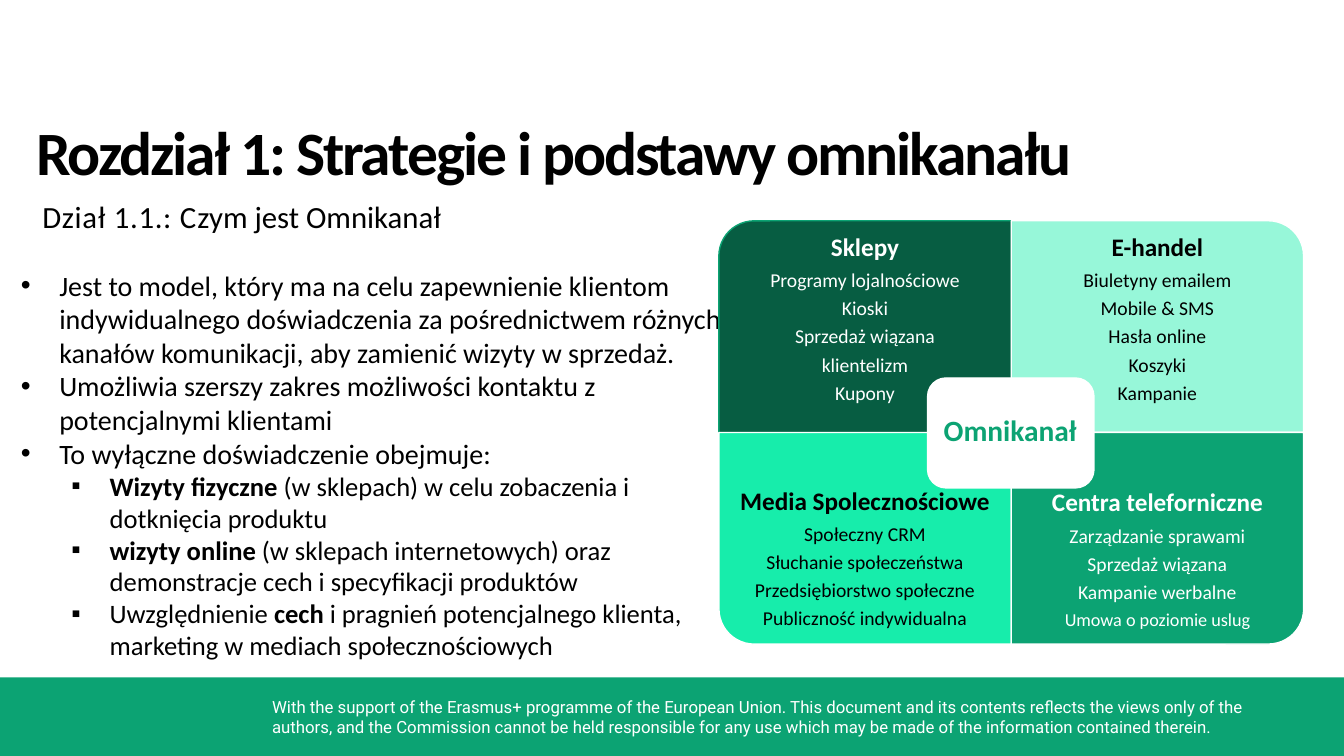
from lxml.etree import SubElement
from pptx import Presentation
from pptx.dml.color import RGBColor
from pptx.enum.shapes import MSO_SHAPE
from pptx.enum.text import MSO_ANCHOR, MSO_AUTO_SIZE, PP_ALIGN
from pptx.oxml.ns import qn
from pptx.util import Inches, Pt

COLORS = {
    "black": "000000", "white": "FFFFFF", "green": "0CA373",
    "dark": "075D42", "pale": "97F7D9", "bright": "17EDAB",
}


class Deck:
    """Holds the style and the current slide."""

    def __init__(self, width, height):
        self.prs = Presentation()
        self.prs.slide_width = Inches(width)
        self.prs.slide_height = Inches(height)
        self.slide = self.prs.slides.add_slide(self.prs.slide_layouts[5])
        self.font = "Calibri"

    def color(self, name):
        return RGBColor.from_string(COLORS[name])

    def run(self, para, text, size, color="black", bold=False, gap=0, font=None):
        run = para.add_run()
        run.text = text
        run.font.name = font or self.font
        run.font.size = Pt(size)
        run.font.bold = bold
        run.font.color.rgb = self.color(color)
        if gap:
            run.font._element.set("spc", str(int(gap * 100)))

    def frame(self, shape, inset, anchor):
        frame = shape.text_frame
        frame.word_wrap = True
        frame.auto_size = MSO_AUTO_SIZE.NONE
        frame.vertical_anchor = anchor
        frame.margin_left = frame.margin_right = Inches(inset[0])
        frame.margin_top = frame.margin_bottom = Inches(inset[1])
        return frame

    def title(self, text, box, size, gap):
        shape = self.slide.shapes.title
        shape.left, shape.top, shape.width, shape.height = map(Inches, box)
        para = self.frame(shape, (0, 0.01), MSO_ANCHOR.TOP).paragraphs[0]
        para.alignment = PP_ALIGN.LEFT
        self.run(para, text, size, bold=True, gap=gap)

    def text(self, box, inset=(0.1, 0.05), anchor=MSO_ANCHOR.TOP):
        shape = self.slide.shapes.add_textbox(*map(Inches, box))
        return self.frame(shape, inset, anchor)

    def shape(self, kind, box, fill, line=None, turn=0):
        shape = self.slide.shapes.add_shape(kind, *map(Inches, box))
        shape.shadow.inherit = False
        shape.rotation = turn
        shape.fill.solid()
        shape.fill.fore_color.rgb = self.color(fill)
        if line:
            shape.line.color.rgb = self.color(line)
            shape.line.width = Pt(1)
        else:
            shape.line.fill.background()

    def next(self, frame, first):
        return frame.paragraphs[0] if first else frame.add_paragraph()

    def bullets(self, box, items):
        frame = self.text(box)
        for i, (level, parts) in enumerate(items):
            para = self.next(frame, i == 0)
            para.level = level
            props = para._p.get_or_add_pPr()
            props.set("marL", str(Inches(0.38 + 0.5 * level)))
            props.set("indent", str(Inches(-0.38)))
            SubElement(props, qn("a:buFont")).set("typeface", "Arial")
            SubElement(props, qn("a:buChar")).set("char", "•▪"[level])
            for part, bold in parts:
                self.run(para, part, 20 - level, bold=bold)

    def lines(self, box, items, color, inset, anchor):
        """Centred lines, each a (text, size, bold) tuple."""
        frame = self.text(box, (inset, inset), anchor)
        for i, (text, size, bold) in enumerate(items):
            para = self.next(frame, i == 0)
            para.alignment = PP_ALIGN.CENTER
            para.line_spacing = 0.9
            para.space_after = Pt(0.35 * size)
            self.run(para, text, size, color, bold)

    def card(self, cell, turn, fill, line, color, head, items):
        left, top, width, height = cell
        # A quarter turn swaps the sides around the same centre
        if turn % 180:
            shift = (width - height) / 2
            cell = (left + shift, top - shift, height, width)
        self.shape(MSO_SHAPE.ROUND_1_RECTANGLE, cell, fill, line, turn)
        low = turn in (90, 180)
        area = (left, top + (0.52 if low else 0), width, 1.58)
        anchor = MSO_ANCHOR.BOTTOM if low else MSO_ANCHOR.TOP
        rows = [(head, 18, True)] + [(text, size, False) for text, size in items]
        self.lines(area, rows, color, 0.14, anchor)


def main():
    deck = Deck(13.33, 7.5)

    # Footer band
    deck.shape(MSO_SHAPE.RECTANGLE, (0, 6.72, 13.33, 0.78), "green")
    note = deck.text((2.6, 6.86, 10.42, 0.5))
    deck.run(note.paragraphs[0],
             "With the support of the Erasmus+ programme of the European Union. "
             "This document and its contents reflects the views only of the "
             "authors, and the Commission cannot be held responsible for any use "
             "which may be made of the information contained therein.",
             12, "white", font="Roboto")

    # Title and section
    deck.title("Rozdział 1: Strategie i podstawy omnikanału",
               (0.36, 1.12, 10.4, 0.75), 44, -1.5)
    part = deck.text((0.42, 1.94, 4.7, 0.67), (0, 0.02)).paragraphs[0]
    deck.run(part, "Dział 1.1.: C", 22, gap=0.5)
    deck.run(part, "zym jest Omnikanał", 22)

    # Body list
    deck.bullets((0.11, 2.61, 7.17, 4.04), [
        (0, [("Jest to model, który ma na celu zapewnienie klientom "
              "indywidualnego doświadczenia za pośrednictwem różnych kanałów "
              "komunikacji, aby zamienić wizyty w sprzedaż.", False)]),
        (0, [("Umożliwia szerszy zakres możliwości kontaktu z "
              "potencjalnymi klientami", False)]),
        (0, [("To wyłączne doświadczenie obejmuje:", False)]),
        (1, [("Wizyty fizyczne ", True),
             ("(w sklepach) w celu zobaczenia i dotknięcia produktu", False)]),
        (1, [("wizyty online ", True),
             ("(w sklepach internetowych) oraz demonstracje cech i "
              "specyfikacji produktów", False)]),
        (1, [("Uwzględnienie ", False), ("cech ", True),
             ("i pragnień potencjalnego klienta, marketing w mediach "
              "społecznościowych", False)]),
    ])

    # Four channel cards, row by row
    cards = [
        (270, "dark", "green", "white", "Sklepy",
         [("Programy lojalnościowe", 14), ("Kioski", 14),
          ("Sprzedaż wiązana", 14), ("klientelizm", 14), ("Kupony", 14)]),
        (0, "pale", "white", "black", "E-handel",
         [("Biuletyny emailem", 14), ("Mobile & SMS", 14),
          ("Hasła online", 14), ("Koszyki", 14), ("Kampanie", 14)]),
        (180, "bright", "white", "black", "Media Spolecznościowe",
         [("Społeczny CRM", 14), ("Słuchanie społeczeństwa", 14),
          ("Przedsiębiorstwo społeczne", 14), ("Publiczność indywidualna", 14)]),
        (90, "green", "white", "white", "Centra teleforniczne",
         [("Zarządzanie sprawami", 14), ("Sprzedaż wiązana", 14),
          ("Kampanie werbalne", 14), ("Umowa o poziomie uslug", 13)]),
    ]
    wide, high = 2.9, 2.1
    for i, card in enumerate(cards):
        row, col = divmod(i, 2)
        deck.card((7.13 + col * wide, 2.19 + row * high, wide, high), *card)

    # Centre label
    deck.shape(MSO_SHAPE.ROUNDED_RECTANGLE, (9.2, 3.75, 1.65, 1.09),
               "white", "white")
    deck.lines((9.25, 3.8, 1.54, 0.98), [("Omnikanał", 21, True)],
               "green", 0.09, MSO_ANCHOR.MIDDLE)

    deck.prs.save("out.pptx")


if __name__ == "__main__":
    main()
